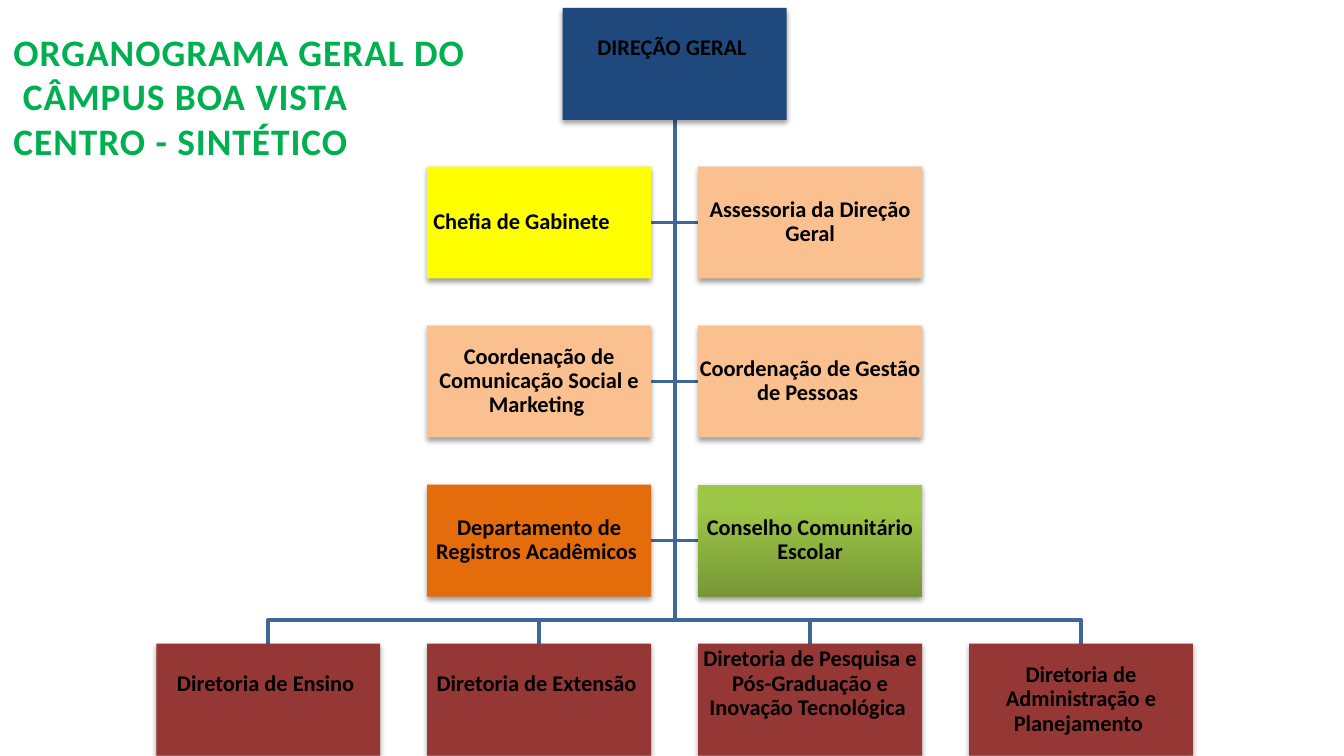
from pptx import Presentation
from pptx.dml.color import RGBColor
from pptx.enum.shapes import MSO_SHAPE
from pptx.enum.text import MSO_ANCHOR, MSO_AUTO_SIZE, PP_ALIGN
from pptx.oxml import parse_xml
from pptx.oxml.ns import nsdecls, qn
from pptx.util import Pt

COLORS = {
    "line": "3F6797", "root": "1F497D", "board": "953735",
    "cabinet": "FFFF00", "staff": "FAC090", "records": "E46C0A",
    "council_dark": "779737", "council_light": "9DC746",
    "title": "00B050", "text": "000000",
}
BOX_W, BOX_H = 120, 60
COL_X, COL_STEP = 83.7, 145.15
ROW_Y, ROW_STEP = 89.2, 85.2
ROOT_X, ROOT_Y = COL_X + 1.5 * COL_STEP, 4.2
CENTER_X = ROOT_X + BOX_W / 2
BUS_Y = 332
RAISE = 17

STAFF = [
    ("Chefia de Gabinete ", "cabinet", 16),
    ("Assessoria da Direção Geral", "staff", 0),
    ("Coordenação de Comunicação Social e Marketing ", "staff", 0),
    ("Coordenação de Gestão de Pessoas ", "staff", 0),
    ("Departamento de Registros Acadêmicos ", "records", 0),
    ("Conselho Comunitário Escolar", ("council_dark", "council_light"), 0),
]
BOARDS = [
    ("Diretoria de Ensino ", RAISE),
    ("Diretoria de Extensão ", RAISE),
    ("Diretoria de Pesquisa e Pós-Graduação e Inovação Tecnológica ", RAISE),
    ("Diretoria de Administração e Planejamento ", 0),
]


def rgb(name):
    return RGBColor.from_string(COLORS[name])


def col_x(col):
    return COL_X + col * COL_STEP


def row_y(row):
    return ROW_Y + row * ROW_STEP


class OrgChart:
    font = "Calibri"
    inset = 0.72

    def __init__(self, slide):
        self.slide = slide

    def style(self, p, size, color):
        for r in p.runs:
            r.font.name = self.font
            r.font.size = Pt(size)
            r.font.bold = True
            r.font.color.rgb = rgb(color)

    def title(self, lines, x, y, w, h):
        sp = self.slide.shapes.title
        sp.left, sp.top, sp.width, sp.height = Pt(x), Pt(y), Pt(w), Pt(h)
        tf = sp.text_frame
        tf.text = "\n".join(lines)
        tf.word_wrap = True
        tf.auto_size = MSO_AUTO_SIZE.NONE
        tf.vertical_anchor = MSO_ANCHOR.TOP
        for p in tf.paragraphs:
            p.alignment = PP_ALIGN.LEFT
            self.style(p, 20, "title")
            for r in p.runs:
                r.font._element.set("spc", "50")

    def shadow(self, sp):
        sp.shadow.inherit = False
        effects = sp._element.spPr.find(qn("a:effectLst"))
        effects.append(parse_xml(
            f'<a:outerShdw {nsdecls("a")} blurRad="{Pt(3.1)}" dist="{Pt(1.7)}" '
            'dir="5400000" rotWithShape="0"><a:srgbClr val="000000">'
            '<a:alpha val="38000"/></a:srgbClr></a:outerShdw>'))

    def box(self, text, fill, x, y, right=0, bottom=0):
        sp = self.slide.shapes.add_shape(
            MSO_SHAPE.RECTANGLE, Pt(x), Pt(y), Pt(BOX_W), Pt(BOX_H))
        if isinstance(fill, tuple):
            sp.fill.gradient()
            sp.fill.gradient_angle = 90
            for stop, color, position in zip(sp.fill.gradient_stops, fill, (0, 0.8)):
                stop.color.rgb = rgb(color)
                stop.position = position
        else:
            sp.fill.solid()
            sp.fill.fore_color.rgb = rgb(fill)
        sp.line.fill.background()
        self.shadow(sp)
        tf = sp.text_frame
        tf.text = text
        tf.word_wrap = True
        tf.vertical_anchor = MSO_ANCHOR.MIDDLE
        tf.margin_left = tf.margin_top = Pt(self.inset)
        tf.margin_right = Pt(self.inset + right)
        tf.margin_bottom = Pt(self.inset + bottom)
        p = tf.paragraphs[0]
        p.alignment = PP_ALIGN.CENTER
        p.line_spacing = 0.9
        self.style(p, 12, "text")

    def branch(self, *points):
        builder = self.slide.shapes.build_freeform(
            Pt(CENTER_X), Pt(ROOT_Y + BOX_H))
        builder.add_line_segments([(Pt(x), Pt(y)) for x, y in points], close=False)
        sp = builder.convert_to_shape()
        sp.fill.background()
        sp.line.color.rgb = rgb("line")
        sp.line.width = Pt(2)
        sp.shadow.inherit = False


def main():
    prs = Presentation()
    prs.slide_width, prs.slide_height = Pt(720), Pt(405)
    chart = OrgChart(prs.slides.add_slide(prs.slide_layouts[5]))

    for row in reversed(range(3)):
        y = row_y(row) + BOX_H / 2
        for x in (col_x(2), col_x(1) + BOX_W):
            chart.branch((CENTER_X, y), (x, y))
    for col in reversed(range(4)):
        x = col_x(col) + BOX_W / 2
        chart.branch((CENTER_X, BUS_Y), (x, BUS_Y), (x, row_y(3)))

    chart.box("DIREÇÃO GERAL ", "root", ROOT_X, ROOT_Y, bottom=RAISE)
    for col, (text, bottom) in enumerate(BOARDS):
        chart.box(text, "board", col_x(col), row_y(3), bottom=bottom)
    for i, (text, fill, right) in enumerate(STAFF):
        row, side = divmod(i, 2)
        chart.box(text, fill, col_x(1 + side), row_y(row), right=right)

    chart.title(["ORGANOGRAMA GERAL DO", " CÂMPUS BOA VISTA CENTRO - SINTÉTICO"],
                0, 11.8, 258, 104.5)
    prs.save("out.pptx")


if __name__ == "__main__":
    main()
